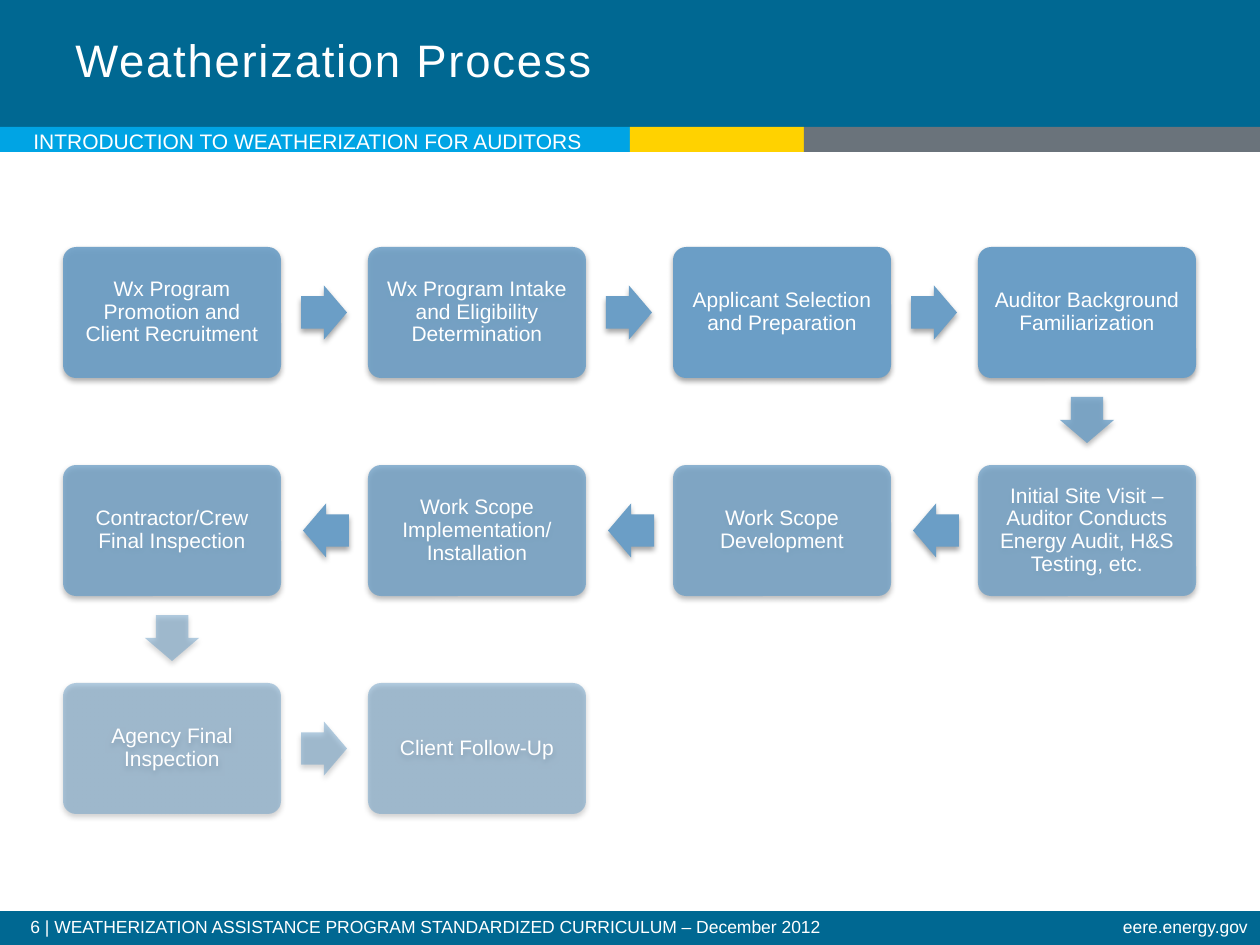
from dataclasses import dataclass

from lxml import etree
from pptx import Presentation
from pptx.dml.color import RGBColor
from pptx.enum.shapes import MSO_SHAPE
from pptx.enum.text import MSO_ANCHOR, PP_ALIGN
from pptx.oxml.ns import qn
from pptx.util import Emu, Pt

RECT, ROUNDED, ARROW = MSO_SHAPE.RECTANGLE, MSO_SHAPE.ROUNDED_RECTANGLE, MSO_SHAPE.RIGHT_ARROW
TOP, MIDDLE = MSO_ANCHOR.TOP, MSO_ANCHOR.MIDDLE
LEFT, CENTER, RIGHT = PP_ALIGN.LEFT, PP_ALIGN.CENTER, PP_ALIGN.RIGHT

PX_PER_INCH = 126
COLORS = {
    "header": "006892",
    "sky": "00A4E4",
    "yellow": "FFD200",
    "gray": "6A737B",
    "step": "6B9EC6",
    "text": "FFFFFF",
    "shadow": "000000",
}

GRID_LEFT, GRID_TOP = 63, 247
COLUMN_PITCH, ROW_PITCH = 305, 218
STEP_W, STEP_H = 218, 131
ARROW_W, ARROW_H = 46, 54
RIGHT_GAP, LEFT_GAP, DOWN_CENTER = 238, 240, 173
STEP_MARGIN = 10


@dataclass(frozen=True)
class Band:
    left: int
    top: int
    width: int
    height: int
    color: str


@dataclass(frozen=True)
class Label:
    text: str
    left: int
    top: int
    width: int
    height: int
    size: int
    align: PP_ALIGN = LEFT
    anchor: MSO_ANCHOR = MIDDLE
    line_spacing: float | Pt = 1.0
    tracking: int = 0


@dataclass(frozen=True)
class Step:
    text: str
    column: int
    row: int
    opacity: int = 100
    arrow_opacity: int = 100  # arrow leading into this step


BANDS = [
    Band(0, 0, 1260, 127, "header"),
    Band(0, 911, 1260, 34, "header"),
    Band(0, 127, 630, 25, "sky"),
    Band(630, 127, 174, 25, "yellow"),
    Band(804, 127, 456, 25, "gray"),
]

LABELS = [
    Label("6 | WEATHERIZATION ASSISTANCE PROGRAM STANDARDIZED CURRICULUM – December 2012",
          18, 912, 1004, 33, 10, anchor=TOP, line_spacing=0.9),
    Label("eere.energy.gov", 755, 912, 505, 33, 10, RIGHT, TOP, 0.9),
    Label("Weatherization Process", 63, 0, 742, 125, 26, line_spacing=Pt(28), tracking=100),
    Label("INTRODUCTION TO WEATHERIZATION FOR AUDITORS", 21, 122, 609, 38, 12),
]

STEPS = [
    Step("Wx Program Promotion and Client Recruitment", 0, 0, 90),
    Step("Wx Program Intake and Eligibility Determination", 1, 0, 86),
    Step("Applicant Selection and Preparation", 2, 0),
    Step("Auditor Background Familiarization", 3, 0),
    Step("Initial Site Visit – Auditor Conducts Energy Audit, H&S Testing, etc.", 3, 1, 75, 80),
    Step("Work Scope Development", 2, 1, 75),
    Step("Work Scope Implementation/\vInstallation", 1, 1, 75),
    Step("Contractor/Crew Final Inspection", 0, 1, 75),
    Step("Agency Final Inspection", 0, 2, 50, 50),
    Step("Client Follow-Up", 1, 2, 50, 50),
]


def px(value: float) -> Emu:
    return Emu(round(value * 914400 / PX_PER_INCH))


def add_filled(slide, kind, left: float, top: float, width: int, height: int, color: str):
    shape = slide.shapes.add_shape(kind, px(left), px(top), px(width), px(height))
    shape.shadow.inherit = False
    shape.fill.solid()
    shape.fill.fore_color.rgb = RGBColor.from_string(COLORS[color])
    shape.line.fill.background()
    return shape


def set_alpha(color_element, percent: int) -> None:
    etree.SubElement(color_element, qn("a:alpha"), val=str(percent * 1000))


def add_effects(shape, opacity: int) -> None:
    """Apply fill opacity and the soft shadow below the shape."""
    properties = shape._element.spPr
    if opacity < 100:
        set_alpha(properties.find(qn("a:solidFill"))[0], opacity)
    shadow = etree.SubElement(properties.find(qn("a:effectLst")), qn("a:outerShdw"),
                              blurRad="40000", dist="23000", dir="5400000", rotWithShape="0")
    set_alpha(etree.SubElement(shadow, qn("a:srgbClr"), val=COLORS["shadow"]), 35)


def set_text(shape, text: str, size: int, align, anchor, line_spacing, tracking: int = 0) -> None:
    frame = shape.text_frame
    frame.word_wrap = True
    frame.vertical_anchor = anchor
    frame.text = text
    paragraph = frame.paragraphs[0]
    paragraph.alignment = align
    paragraph.line_spacing = line_spacing
    for run in paragraph.runs:
        run.font.name = "Arial"
        run.font.size = Pt(size)
        run.font.color.rgb = RGBColor.from_string(COLORS["text"])
        if tracking:
            run._r.get_or_add_rPr().set("spc", str(tracking))


def add_label(slide, label: Label) -> None:
    box = slide.shapes.add_textbox(px(label.left), px(label.top), px(label.width), px(label.height))
    set_text(box, label.text, label.size, label.align, label.anchor,
             label.line_spacing, label.tracking)


def step_origin(column: int, row: int) -> tuple[int, int]:
    return GRID_LEFT + column * COLUMN_PITCH, GRID_TOP + row * ROW_PITCH


def add_step(slide, step: Step) -> None:
    box = add_filled(slide, ROUNDED, *step_origin(step.column, step.row), STEP_W, STEP_H, "step")
    box.adjustments[0] = 0.1
    add_effects(box, step.opacity)
    frame = box.text_frame
    frame.margin_left = frame.margin_right = px(STEP_MARGIN)
    frame.margin_top = frame.margin_bottom = px(STEP_MARGIN)
    set_text(box, step.text, 12, CENTER, MIDDLE, 0.9)


def add_arrow(slide, start: Step, end: Step) -> None:
    """Point a block arrow from one step to its neighbour."""
    left, top = step_origin(min(start.column, end.column), start.row)
    if end.row > start.row:
        rotation = 90
        center_x, center_y = left + STEP_W / 2, top + DOWN_CENTER
    else:
        forward = end.column > start.column
        rotation = 0 if forward else 180
        center_x = left + (RIGHT_GAP if forward else LEFT_GAP) + ARROW_W / 2
        center_y = top + STEP_H / 2
    arrow = add_filled(slide, ARROW, center_x - ARROW_W / 2, center_y - ARROW_H / 2,
                       ARROW_W, ARROW_H, "step")
    arrow.adjustments[0] = 0.6
    arrow.adjustments[1] = 0.5
    arrow.rotation = rotation
    add_effects(arrow, end.arrow_opacity)


def main() -> None:
    presentation = Presentation()
    presentation.slide_width, presentation.slide_height = px(1260), px(945)
    slide = presentation.slides.add_slide(presentation.slide_layouts[6])
    for band in BANDS:
        add_filled(slide, RECT, band.left, band.top, band.width, band.height, band.color)
    for label in LABELS:
        add_label(slide, label)
    for step in STEPS:
        add_step(slide, step)
    for start, end in zip(STEPS, STEPS[1:]):
        add_arrow(slide, start, end)
    presentation.save("out.pptx")


if __name__ == "__main__":
    main()
